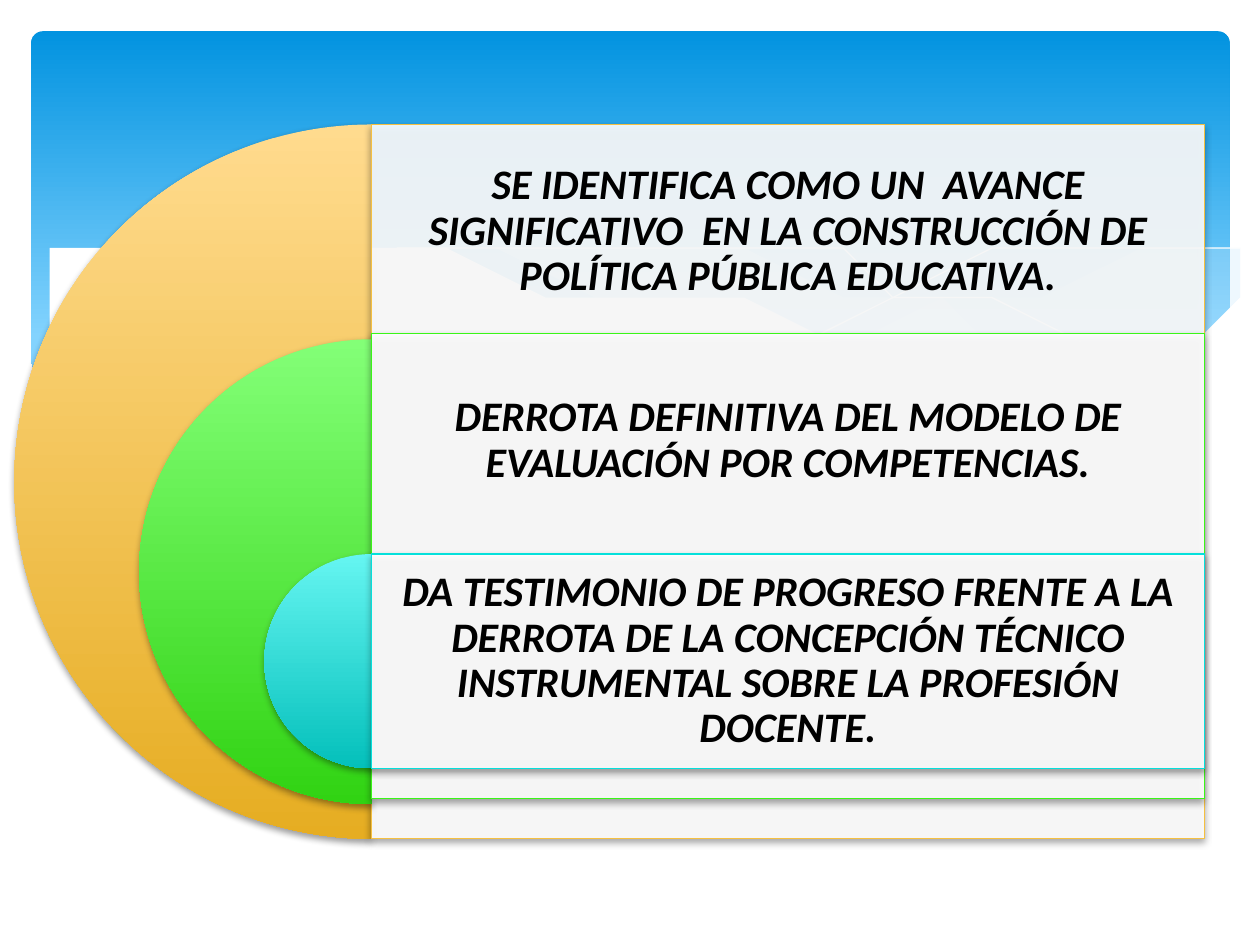
from lxml.etree import SubElement
from pptx import Presentation
from pptx.dml.color import RGBColor
from pptx.enum.shapes import MSO_SHAPE as Preset
from pptx.enum.text import MSO_ANCHOR as Anchor, PP_ALIGN as Align
from pptx.oxml.ns import qn
from pptx.util import Cm, Pt

# text, top of half disc, top of panel, diameter, disc gradient, panel line
LEVELS = [
    ("SE IDENTIFICA COMO UN  AVANCE SIGNIFICATIVO  EN LA CONSTRUCCIÓN DE "
     "POLÍTICA PÚBLICA EDUCATIVA.", 2.51, 2.51, 14.4, ("FFDB8E", "E6AD22"), "F5C040"),
    ("DERROTA DEFINITIVA DEL MODELO DE EVALUACIÓN POR COMPETENCIAS.",
     6.84, 6.73, 9.37, ("83FF77", "31D313"), "3AF617"),
    ("DA TESTIMONIO DE PROGRESO FRENTE A LA DERROTA DE LA CONCEPCIÓN TÉCNICO "
     "INSTRUMENTAL SOBRE LA PROFESIÓN DOCENTE.",
     11.17, 11.17, 4.32, ("65F5F1", "04C0BB"), "05E0DB"),
]
PANEL_LEFT, PANEL_WIDTH, TEXT_HEIGHT = 7.49, 16.79, 4.32

RIGHT_WAVE = [
    (24.79, 5.08), (23.75, 5.26), (22.63, 5.49), (21.13, 5.84), (19.13, 6.3),
    (16.79, 6.73), (17.91, 6.88), (19.23, 7.01), (20.68, 7.06), (21.92, 6.99),
    (22.99, 6.83), (23.93, 6.58), (24.79, 6.27)]
MIDDLE_WAVE = [
    (22.68, 6.93), (20.5, 6.6), (18.82, 6.27), (16.97, 5.87), (15.19, 5.44),
    (13.74, 5.16), (12.42, 4.93), (10.67, 4.75), (9.17, 4.7), (7.95, 4.78),
    (7.26, 4.85), (8.69, 5.05), (10.26, 5.36), (12.47, 5.89), (14.38, 6.3),
    (16.1, 6.63), (17.65, 6.86), (19.33, 7.04), (20.78, 7.06), (21.77, 7.04)]
LONG_LINE = [
    (7.85, 4.95), (8.74, 4.83), (10.19, 4.75), (11.91, 4.8), (13.54, 4.93),
    (15.44, 5.18), (16.89, 5.41), (18.47, 5.74), (20.19, 6.12), (22.07, 6.63),
    (23.04, 6.91)]
SHORT_LINE = [
    (15.57, 6.53), (17.65, 5.97), (19.71, 5.49), (21.23, 5.18), (22.73, 4.93),
    (23.83, 4.78), (24.77, 4.7)]
WHITE_WAVE = [
    (24.82, 6.25), (23.88, 6.58), (22.83, 6.83), (21.59, 6.99), (20.55, 7.04),
    (18.9, 6.96), (16.97, 6.73), (15.32, 6.45), (13.44, 6.07), (11.35, 5.59),
    (9.27, 5.13), (7.42, 4.83), (5.84, 4.7), (4.5, 4.67), (3.35, 4.72),
    (2.41, 4.85), (1.7, 5), (1.17, 5.16), (0.58, 5.41), (0.58, 8.36), (24.82, 8.36)]


def rgb(color):
    return RGBColor.from_string(color)


def set_alpha(color_element, percent):
    SubElement(color_element, qn("a:alpha"), val=str(percent * 1000))


def fill_solid(shape, color, opacity=100):
    shape.fill.solid()
    shape.fill.fore_color.rgb = rgb(color)
    if opacity < 100:
        set_alpha(shape._element.spPr.find(qn("a:solidFill"))[0], opacity)


def fill_down(shape, colors, end=1.0):
    """Fill with a gradient from top to bottom."""
    shape.fill.gradient()
    shape.fill.gradient_angle = 270
    for stop, color, position in zip(shape.fill.gradient_stops, colors, (0, end)):
        stop.color.rgb = rgb(color)
        stop.position = position


def set_line(shape, color, width):
    shape.line.color.rgb = rgb(color)
    shape.line.width = Pt(width)


def add_preset(shapes, preset, left, top, width, height):
    shape = shapes.add_shape(preset, Cm(left), Cm(top), Cm(width), Cm(height))
    shape.shadow.inherit = False
    shape.line.fill.background()
    return shape


def add_outline(shapes, points, close=True):
    builder = shapes.build_freeform(*points[0], scale=Cm(1))
    builder.add_line_segments(points[1:], close=close)
    shape = builder.convert_to_shape()
    shape.shadow.inherit = False
    shape.line.fill.background()
    return shape


def drop_shadow(shape):
    effects = shape._element.spPr.find(qn("a:effectLst"))
    shadow = SubElement(effects, qn("a:outerShdw"), blurRad=str(Pt(4)),
                        dist=str(Pt(2)), dir="5400000", rotWithShape="0")
    set_alpha(SubElement(shadow, qn("a:srgbClr"), val="000000"), 38)


def add_header(shapes):
    banner = add_preset(shapes, Preset.ROUNDED_RECTANGLE, 0.63, 0.63, 24.16, 6.86)
    banner.adjustments[0] = 0.034
    fill_down(banner, ("0293E0", "83D3FE"), 0.9)
    for points, color, opacity in ((RIGHT_WAVE, "C6E7FC", 29), (MIDDLE_WAVE, "C6E7FC", 40)):
        fill_solid(add_outline(shapes, points), color, opacity)
    for points in (LONG_LINE, SHORT_LINE):
        line = add_outline(shapes, points, close=False)
        line.fill.background()
        set_line(line, "FFFFFF", 0)
    fill_solid(add_outline(shapes, WHITE_WAVE), "FFFFFF")


def add_level(shapes, text, disc_top, panel_top, diameter, gradient, line_color):
    disc = add_preset(shapes, Preset.PIE, PANEL_LEFT - diameter / 2, disc_top,
                      diameter, diameter)
    disc.adjustments[0], disc.adjustments[1] = 54, 162
    fill_down(disc, gradient)
    drop_shadow(disc)

    panel = add_preset(shapes, Preset.RECTANGLE, PANEL_LEFT, panel_top,
                       PANEL_WIDTH, diameter)
    fill_solid(panel, "FFFFFF", 90)
    set_line(panel, line_color, 0.75)
    drop_shadow(panel)

    box = shapes.add_textbox(Cm(PANEL_LEFT), Cm(panel_top), Cm(PANEL_WIDTH), Cm(TEXT_HEIGHT))
    frame = box.text_frame
    frame.word_wrap = True
    frame.vertical_anchor = Anchor.MIDDLE
    frame.margin_left = frame.margin_right = Cm(0.25)
    frame.margin_top = frame.margin_bottom = Cm(0.25)
    para = frame.paragraphs[0]
    para.text = text
    para.alignment = Align.CENTER
    para.line_spacing = 0.9
    para.font.name, para.font.size = "Calibri", Pt(24)
    para.font.bold = para.font.italic = True
    para.font.color.rgb = rgb("000000")


def main():
    deck = Presentation()
    deck.slide_width, deck.slide_height = Cm(25.4), Cm(19.05)
    page = deck.slides.add_slide(deck.slide_layouts[6])
    add_header(page.shapes)
    for level in LEVELS:
        add_level(page.shapes, *level)
    deck.save("out.pptx")


if __name__ == "__main__":
    main()
